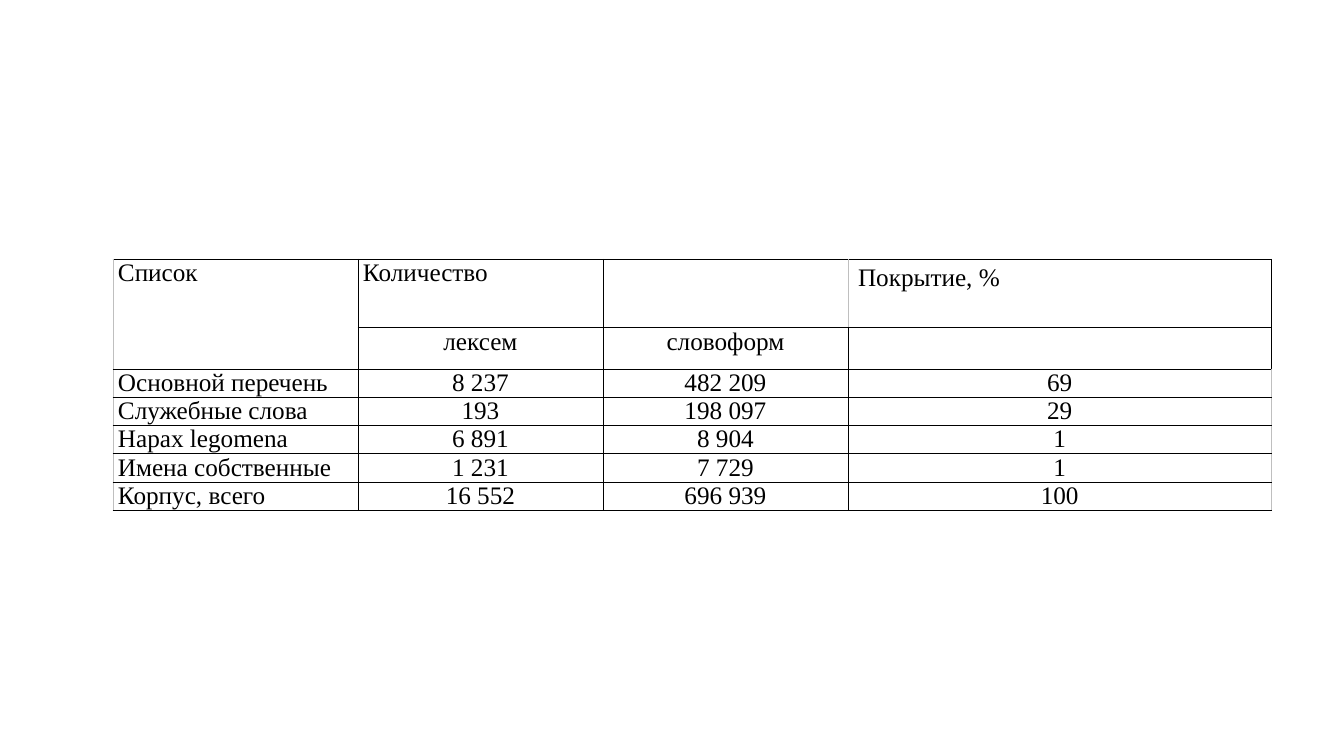
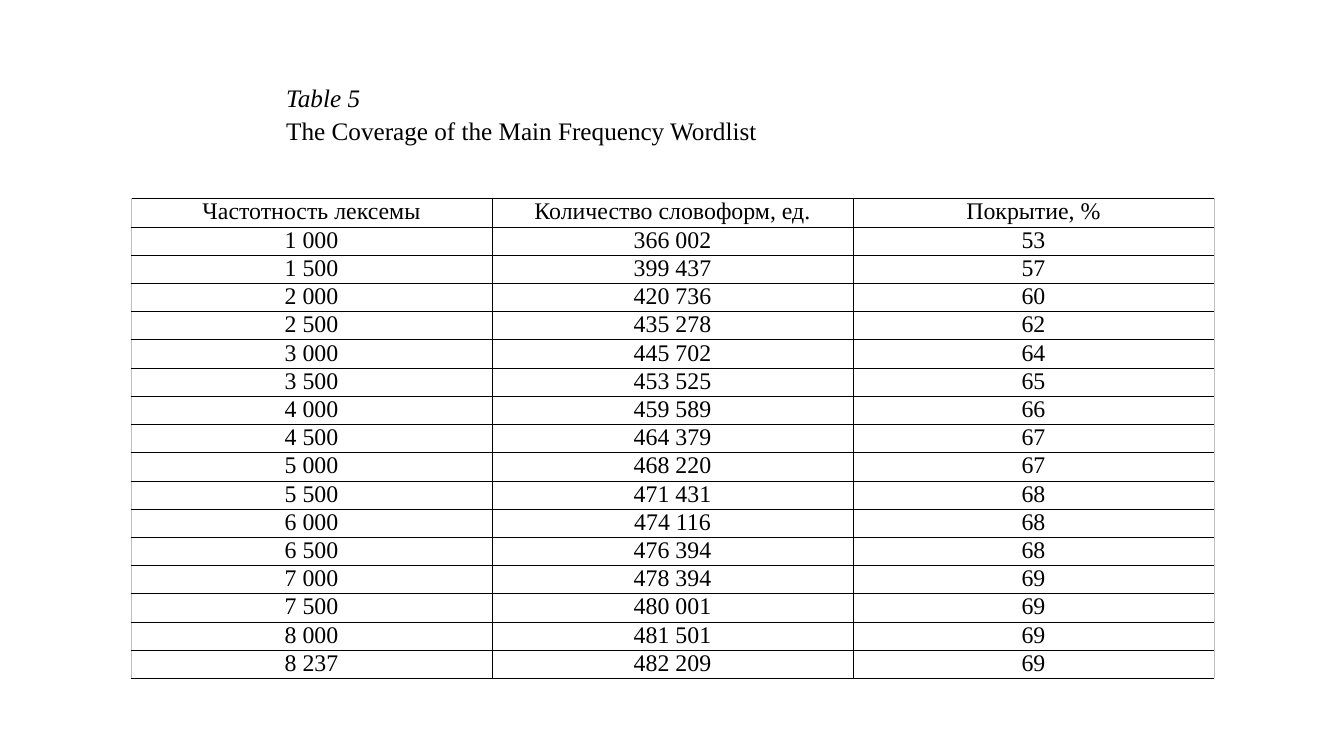
from lxml.etree import SubElement
from pptx import Presentation
from pptx.dml.color import RGBColor
from pptx.enum.text import PP_ALIGN as Align
from pptx.oxml.ns import qn
from pptx.util import Inches, Pt

COLORS = {"ink": "000000", "edge": "BFBFBF", "paper": "FFFFFF"}
THIN, PALE, BOLD = ("ink", 0.38), ("edge", 0.6), ("ink", 1)


def write(paragraph, content, size=18, align=Align.LEFT, italic=False, after=0):
    paragraph.alignment = align
    paragraph.space_after = Pt(after)
    run = paragraph.add_run()
    run.text = content
    run.font.name = "Times New Roman"
    run.font.size = Pt(size)
    run.font.italic = italic
    run.font.color.rgb = RGBColor.from_string(COLORS["ink"])


class Deck:
    """Holds the shared style and the slide being built."""

    def __init__(self):
        self.show = Presentation()
        self.show.slide_width, self.show.slide_height = Inches(13.33), Inches(7.5)
        self.slide = None

    def new_slide(self):
        self.slide = self.show.slides.add_slide(self.show.slide_layouts[6])
        fill = self.slide.background.fill
        fill.solid()
        fill.fore_color.rgb = RGBColor.from_string(COLORS["paper"])

    def caption(self, left, top, width, height, lines):
        frame = self.slide.shapes.add_textbox(
            Inches(left), Inches(top), Inches(width), Inches(height)).text_frame
        frame.word_wrap = True
        frame.margin_top = frame.margin_bottom = 0
        for index, (content, look) in enumerate(lines):
            paragraph = frame.add_paragraph() if index else frame.paragraphs[0]
            write(paragraph, content, **look)

    def borders(self, cell, **edges):
        properties = cell._tc.get_or_add_tcPr()
        for side in "LRTB":
            color, width = edges.get(side, THIN)
            line = SubElement(properties, qn(f"a:ln{side}"), w=str(Pt(width)))
            fill = SubElement(line, qn("a:solidFill"))
            SubElement(fill, qn("a:srgbClr"), val=COLORS[color])

    def table(self, left, top, widths, heights, rows, size=18,
              left_aligned=(), roomy=(), merged=None, special=None):
        grid = self.slide.shapes.add_table(
            len(rows), len(widths), Inches(left), Inches(top),
            Inches(sum(widths)), Inches(sum(heights))).table
        grid.first_row = grid.horz_banding = False
        for column, width in zip(grid.columns, widths):
            column.width = Inches(width)
        for row, height in zip(grid.rows, heights):
            row.height = Inches(height)
        last = len(widths) - 1
        for r, row in enumerate(rows):
            for c, content in enumerate(row):
                cell = grid.cell(r, c)
                edges = {"L": PALE} if c == 0 else {"R": PALE} if c == last else {}
                self.borders(cell, **(special or {}).get((r, c), edges))
                cell.fill.background()
                if (r, c) not in roomy:
                    cell.margin_left = cell.margin_right = Inches(0.05)
                    cell.margin_top = cell.margin_bottom = 0
                if content:
                    align = Align.LEFT if (r, c) in left_aligned else Align.CENTER
                    write(cell.text_frame.paragraphs[0], content, size, align)
        if merged:
            start, end = merged
            grid.cell(*start).merge(grid.cell(*end))


LISTS = [
    ("Список", "Количество", "", "Покрытие, %"),
    ("", "лексем", "словоформ", ""),
    ("Основной перечень", "8 237", "482 209", "69"),
    ("Служебные слова", "193", "198 097", "29"),
    ("Hapax legomena", "6 891", "8 904", "1"),
    ("Имена собственные", "1 231", "7 729", "1"),
    ("Корпус, всего", "16 552", "696 939", "100"),
]

COVERAGE = [
    ("Частотность лексемы", "Количество словоформ, ед.", "Покрытие, %"),
    ("1 000", "366 002", "53"),
    ("1 500", "399 437", "57"),
    ("2 000", "420 736", "60"),
    ("2 500", "435 278", "62"),
    ("3 000", "445 702", "64"),
    ("3 500", "453 525", "65"),
    ("4 000", "459 589", "66"),
    ("4 500", "464 379", "67"),
    ("5 000", "468 220", "67"),
    ("5 500", "471 431", "68"),
    ("6 000", "474 116", "68"),
    ("6 500", "476 394", "68"),
    ("7 000", "478 394", "69"),
    ("7 500", "480 001", "69"),
    ("8 000", "481 501", "69"),
    ("8 237", "482 209", "69"),
]


def main():
    deck = Deck()

    deck.new_slide()
    first_column = {(r, 0) for r in range(len(LISTS))}
    deck.table(
        1.12, 2.57, [2.43] * 3 + [4.2], [0.68, 0.41] + [0.28] * 5, LISTS,
        left_aligned=first_column | {(0, 1), (0, 3)},
        roomy={(0, 3), (1, 3)}, merged=((0, 0), (1, 0)),
        special={(0, 2): {"R": PALE},
                 (0, 3): {"L": PALE, "R": BOLD, "B": BOLD},
                 (1, 3): {"R": BOLD, "T": BOLD}})

    deck.new_slide()
    deck.table(1.3, 1.97, [3.58] * 3, [0.28] * len(COVERAGE), COVERAGE, size=17)
    deck.caption(2.74, 0.82, 4.92, 1.14, [
        ("Table 5", {"italic": True, "after": 1.5}),
        ("The Coverage of the Main Frequency Wordlist", {}),
    ])

    deck.show.save("out.pptx")


if __name__ == "__main__":
    main()
